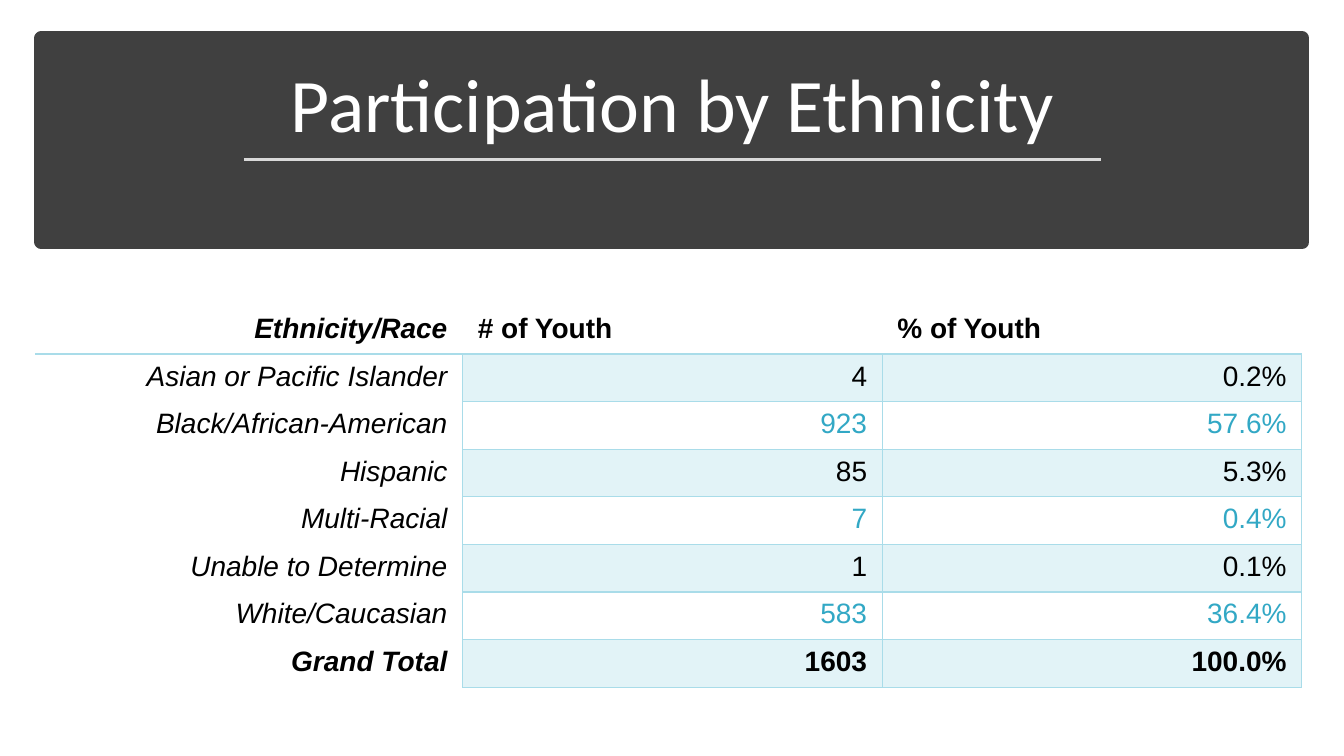
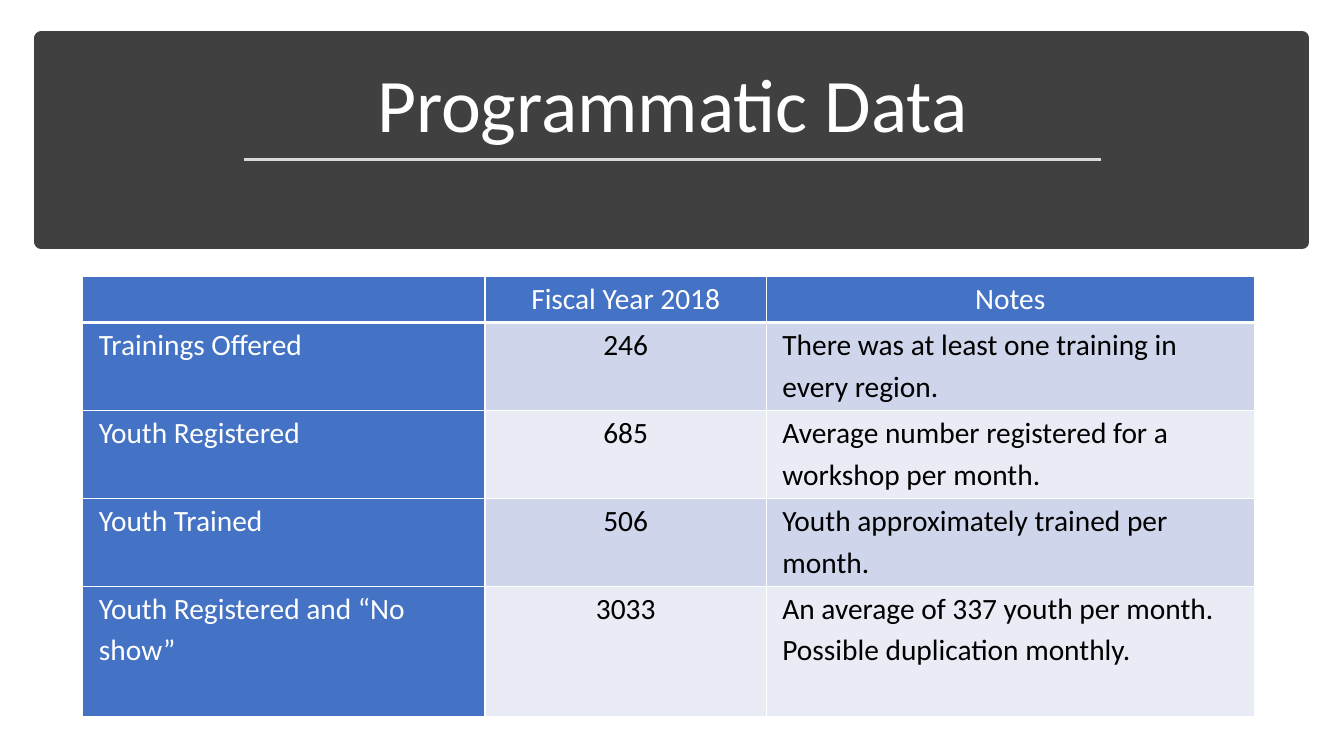
from dataclasses import dataclass
from lxml.etree import SubElement as Sub
from pptx import Presentation as Deck
from pptx.dml.color import RGBColor as Color
from pptx.enum.shapes import MSO_CONNECTOR as Link, MSO_SHAPE as Form
from pptx.enum.text import MSO_ANCHOR as Anchor, MSO_AUTO_SIZE as Fit, PP_ALIGN as Align
from pptx.oxml import parse_xml as read
from pptx.oxml.ns import nsdecls as space, qn
from pptx.util import Pt


@dataclass(frozen=True)
class Theme:
    dark: str = "404040"
    rule: str = "D9D9D9"
    white: str = "FFFFFF"
    black: str = "000000"
    aqua: str = "A9DCE9"
    pale: str = "E2F3F7"
    teal: str = "32A8C5"
    blue: str = "4472C4"
    mist: str = "CFD5EA"
    haze: str = "E9EBF5"
    head: str = "Calibri"
    plain: str = "Arial"
    big: float = 54
    mid: float = 21
    small: float = 20


T = Theme()


def put(item, **vals):
    for name, val in vals.items():
        setattr(item, name, val)


def ink(font, face, size, tone, **more):
    put(font, name=face, size=Pt(size), **more)
    font.color.rgb = Color.from_string(tone)


def paint(fill, tone):
    if tone:
        fill.solid()
        fill.fore_color.rgb = Color.from_string(tone)
    else:
        fill.background()


def stroke(line, tone, width):
    paint(line.fill, tone)
    line.width = Pt(width)


def edge(cell, tone, sides):
    props = cell._tc.get_or_add_tcPr()
    for spot, side in enumerate("LRTB"):
        width = sides.get(side, 0)
        fill = (f'<a:solidFill><a:srgbClr val="{tone}"/></a:solidFill>'
                if width else "<a:noFill/>")
        props.insert(spot, read(
            f'<a:ln{side} {space("a")} w="{Pt(width)}">{fill}</a:ln{side}>'))


class Maker:
    def __init__(self):
        self.deck = Deck()
        put(self.deck, slide_width=Pt(960), slide_height=Pt(540))

    def start(self, text):
        self.slide = self.deck.slides.add_slide(self.deck.slide_layouts[5])
        self.band(29.5, 27.4, 900.7, 145.4)
        self.title(text, 41.8, 36.7, 877, 73.4)
        self.line(174.2, 786.2, 113.8)

    def band(self, left, top, width, height):
        box = self.slide.shapes.add_shape(
            Form.RECTANGLE, Pt(left), Pt(top), Pt(width), Pt(height))
        box.shadow.inherit = False
        paint(box.fill, T.dark)
        stroke(box.line, T.dark, 10)
        self.slide.shapes._spTree.insert(2, box._element)

    def title(self, text, left, top, width, height):
        box = self.slide.shapes.title
        put(box, left=Pt(left), top=Pt(top), width=Pt(width), height=Pt(height))
        put(box.text_frame, text=text, word_wrap=True, auto_size=Fit.NONE,
            vertical_anchor=Anchor.BOTTOM)
        para = box.text_frame.paragraphs[0]
        put(para, alignment=Align.CENTER, line_spacing=0.9)
        ink(para.font, T.head, T.big, T.white)

    def line(self, left, right, level):
        rule = self.slide.shapes.add_connector(
            Link.STRAIGHT, Pt(left), Pt(level), Pt(right), Pt(level))
        stroke(rule.line, T.rule, 1.75)
        Sub(rule._element.spPr, qn("a:effectLst"))

    def grid(self, left, top, cols, rows, data, inset, lift, style):
        frame = self.slide.shapes.add_table(
            len(rows), len(cols), Pt(left), Pt(top), Pt(sum(cols)), Pt(sum(rows)))
        table = frame.table
        put(table, first_row=False, horz_banding=False)
        for col, width in zip(table.columns, cols):
            col.width = Pt(width)
        for row, height in zip(table.rows, rows):
            row.height = Pt(height)
        for y, line in enumerate(data):
            for x, text in enumerate(line):
                cell = table.cell(y, x)
                look = style(y, x)
                put(cell, text=text, margin_left=Pt(inset), margin_right=Pt(inset),
                    margin_top=Pt(lift), margin_bottom=0)
                para = cell.text_frame.paragraphs[0]
                put(para, alignment=look["align"], line_spacing=1.15)
                ink(para.font, **look["font"])
                paint(cell.fill, look["fill"])
                edge(cell, look["edge"], look["sides"])


RACE = [
    ("Ethnicity/Race", "# of Youth", "% of Youth"),
    ("Asian or Pacific Islander", "4", "0.2%"),
    ("Black/African-American", "923", "57.6%"),
    ("Hispanic", "85", "5.3%"),
    ("Multi-Racial", "7", "0.4%"),
    ("Unable to Determine", "1", "0.1%"),
    ("White/Caucasian", "583", "36.4%"),
    ("Grand Total", "1603", "100.0%"),
]

YEAR = [
    ("", "Fiscal Year 2018", "Notes"),
    ("Trainings Offered", "246", "There was at least one training in every region."),
    ("Youth Registered", "685", "Average number registered for a workshop per month."),
    ("Youth Trained", "506", "Youth approximately trained per month."),
    ("Youth Registered and “No show”", "3033",
     "An average of 337 youth per month. Possible duplication monthly."),
]


def race_style(y, x):
    body = y > 0 and x > 0
    if y == 0:
        sides = "B"
    elif x == 0:
        sides = "TR" if y == 1 else "R"
    else:
        sides = "LRTB"
    return dict(
        align=Align.LEFT if y == 0 and x else Align.RIGHT,
        font=dict(face=T.plain, size=T.small, bold=y in (0, len(RACE) - 1),
                  italic=x == 0, tone=T.teal if body and y % 2 == 0 else T.black),
        fill=T.pale if body and y % 2 else None,
        edge=T.aqua, sides=dict.fromkeys(sides, 1))


def year_style(y, x):
    key = y == 0 or x == 0
    return dict(
        align=Align.CENTER if y == 0 or x == 1 else Align.LEFT,
        font=dict(face=T.head, size=T.mid, bold=False,
                  tone=T.white if key else T.black),
        fill=T.blue if key else T.mist if y % 2 else T.haze,
        edge=T.white, sides=dict(L=1, R=1, T=1, B=1 if y else 3))


def main():
    show = Maker()
    show.start("Participation by Ethnicity")
    show.grid(25.2, 218.9, [305.3, 299.7, 299.7], [34] * len(RACE),
              RACE, 10.8, 1.4, race_style)
    show.start("Programmatic Data")
    show.grid(59.2, 197.3, [287.3, 200.9, 348.5], [33.1, 62.8, 62.8, 62.8, 92.9],
              YEAR, 11.5, 0, year_style)
    show.deck.save("out.pptx")


if __name__ == "__main__":
    main()
